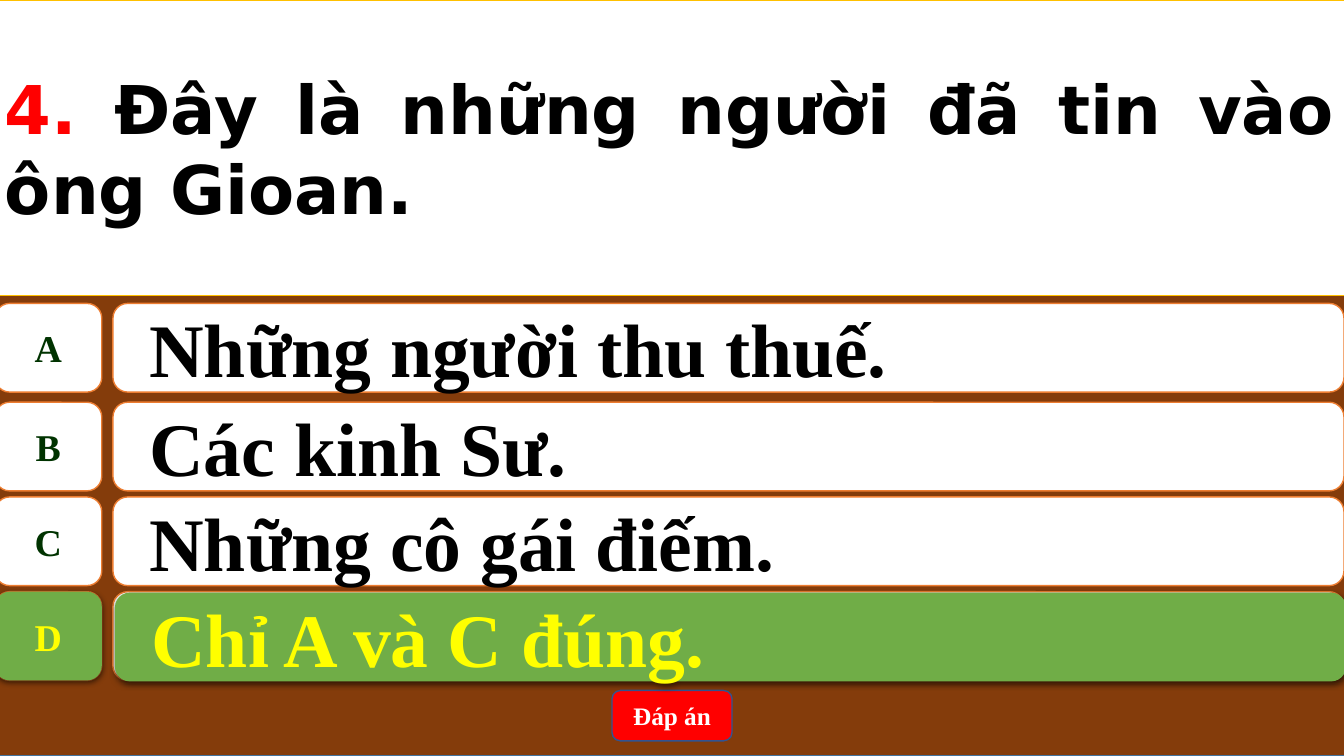
from dataclasses import dataclass

from lxml import etree
from pptx import Presentation
from pptx.dml.color import RGBColor
from pptx.enum.shapes import MSO_SHAPE
from pptx.enum.text import MSO_ANCHOR, PP_ALIGN
from pptx.oxml.ns import qn
from pptx.shapes.autoshape import Shape
from pptx.util import Emu, Inches, Pt

RECT = MSO_SHAPE.RECTANGLE
ROUNDED = MSO_SHAPE.ROUNDED_RECTANGLE
BADGE = MSO_SHAPE.FLOWCHART_ALTERNATE_PROCESS
MIDDLE = MSO_ANCHOR.MIDDLE
CENTER, LEFT, JUSTIFY = PP_ALIGN.CENTER, PP_ALIGN.LEFT, PP_ALIGN.JUSTIFY

SERIF, SANS = "Times New Roman", "DejaVu Sans"
COLORS = {
    "brown": "843C0B", "blue": "43739E", "navy": "325491", "white": "FFFFFF",
    "orange": "ED7D31", "gold": "FFC000", "red": "FF0000", "green": "70AD47",
    "dark_green": "003300", "yellow": "FFFF00", "black": "000000",
}
EDGE = -0.05
FULL_WIDTH = 13.39
ROW_HEIGHT = 0.88


@dataclass
class Box:
    left: float
    top: float
    width: float
    height: float
    fill: str
    line: str | None = None
    line_width: float = 1
    preset: MSO_SHAPE = RECT


@dataclass
class Answer:
    letter: str
    wording: str
    top: float
    correct: bool = False
    shift: float = 0


ANSWERS = [
    Answer("A", "Những người thu thuế.", 3.01),
    Answer("B", "Các kinh Sư.", 3.99),
    Answer("C", "Những cô gái điếm.", 4.93),
    Answer("D", "Chỉ A và C đúng.", 5.87),
    Answer("D", "Chỉ A và C đúng.", 5.87, correct=True, shift=0.02),
]

prs = Presentation()
prs.slide_width, prs.slide_height = Inches(13.33), Inches(7.5)
slide = prs.slides.add_slide(prs.slide_layouts[6])


def color(name: str) -> RGBColor:
    return RGBColor.from_string(COLORS[name])


def draw_box(box: Box) -> Shape:
    shape = slide.shapes.add_shape(
        box.preset, Inches(box.left), Inches(box.top), Inches(box.width), Inches(box.height))
    shape.shadow.inherit = False
    shape.fill.solid()
    shape.fill.fore_color.rgb = color(box.fill)
    if box.line:
        shape.line.color.rgb = color(box.line)
        shape.line.width = Pt(box.line_width)
    else:
        shape.line.fill.background()
    return shape


def write(shape: Shape, parts: list[tuple[str, str]], size: float,
          align: PP_ALIGN = CENTER, font: str = SERIF) -> None:
    """Fill the shape with one paragraph of (wording, color) parts."""
    shape.text_frame.vertical_anchor = MIDDLE
    paragraph = shape.text_frame.paragraphs[0]
    paragraph.alignment = align
    for wording, tint in parts:
        run = paragraph.add_run()
        run.text = wording
        run.font.name = font
        run.font.size = Pt(size)
        run.font.bold = True
        run.font.color.rgb = color(tint)


def add_shadow(shape: Shape) -> None:
    effects = shape._element.spPr.find(qn("a:effectLst"))
    shadow = etree.SubElement(
        effects, qn("a:outerShdw"), blurRad=str(Pt(4.5)), dist=str(Pt(1.5)),
        dir="5400000", algn="ctr", rotWithShape="0")
    tint = etree.SubElement(shadow, qn("a:srgbClr"), val=COLORS["black"])
    etree.SubElement(tint, qn("a:alpha"), val="63000")


def draw_answer(answer: Answer) -> None:
    fill, line = ("green", None) if answer.correct else ("white", "orange")
    letter_color, wording_color = (
        ("yellow", "yellow") if answer.correct else ("dark_green", "black"))

    badge = draw_box(Box(EDGE, answer.top, 1.06, ROW_HEIGHT, fill, line, preset=BADGE))
    badge.text_frame.word_wrap = False
    write(badge, [(answer.letter, letter_color)], 27)

    bar = draw_box(Box(1.12 + answer.shift, answer.top + answer.shift / 2, 12.21,
                       ROW_HEIGHT, fill, line, preset=ROUNDED))
    write(bar, [(answer.wording, wording_color)], 54, LEFT)
    paragraph = bar.text_frame.paragraphs[0]
    paragraph.level = 1
    indents = paragraph._p.get_or_add_pPr()
    indents.set("marL", str(Emu(Inches(0.5))))
    indents.set("indent", str(Emu(Inches(-0.28))))

    if answer.correct:
        add_shadow(badge)
        add_shadow(bar)


# Backdrop
draw_box(Box(EDGE, 0, FULL_WIDTH, 7.5, "brown", "blue"))

# Answer button
button = draw_box(Box(6.07, 6.85, 1.19, 0.5, "red", "navy", preset=ROUNDED))
write(button, [("Đáp án", "white")], 18)

# Answers, with the correct one highlighted last
for answer in ANSWERS:
    draw_answer(answer)

# Question
question = draw_box(Box(EDGE, 0, FULL_WIDTH, 2.93, "white", "gold", 0.5))
write(question,
      [("4. ", "red"), ("Đây là những người đã tin vào ông Gioan.", "black")],
      48, JUSTIFY, SANS)

prs.save("out.pptx")
